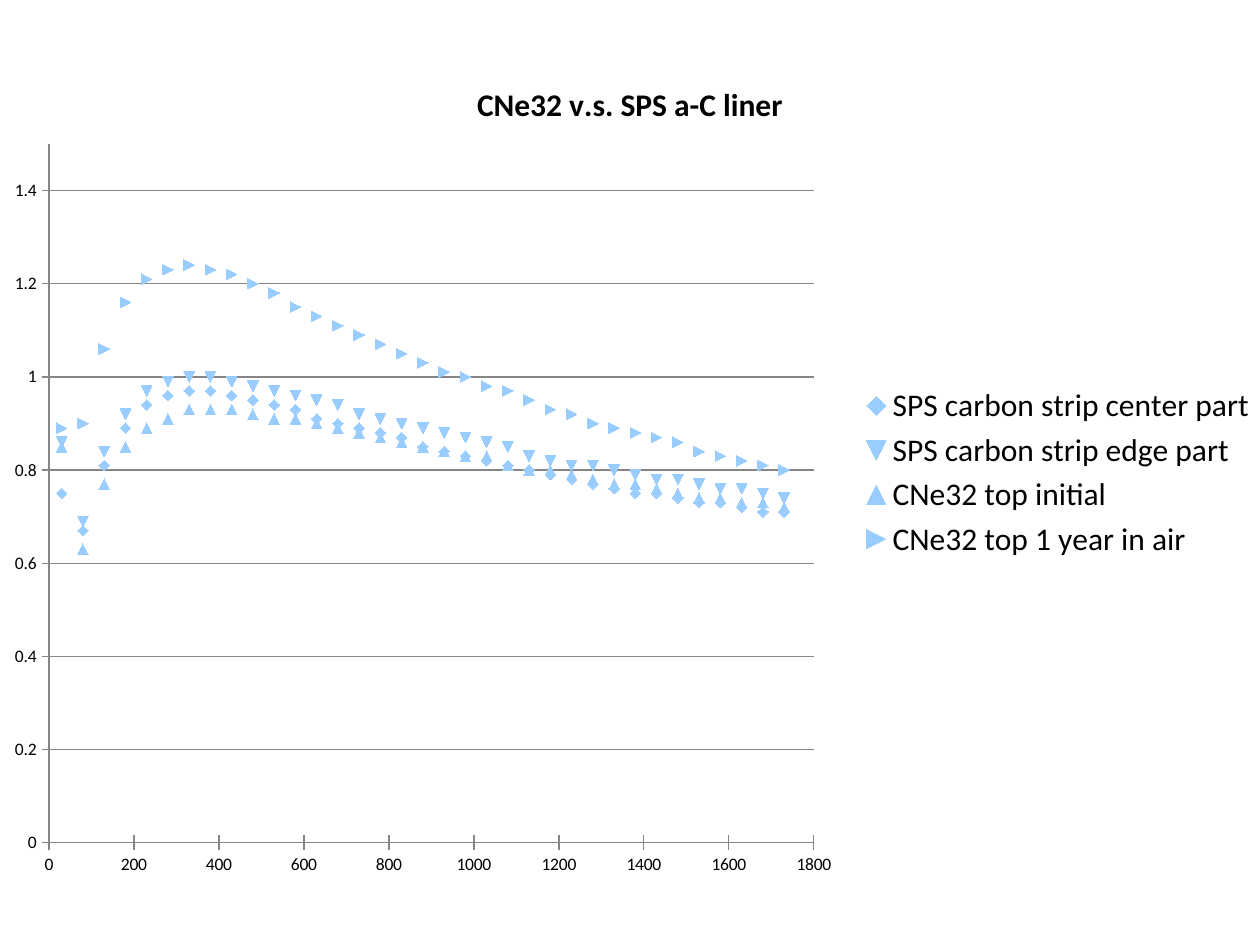
"""Build the CNe32 versus SPS a-C liner scatter slide."""
import dataclasses

import lxml.etree
import pptx
import pptx.chart.axis
import pptx.chart.chart
import pptx.chart.data
import pptx.dml.color
import pptx.enum.chart
import pptx.oxml.ns
import pptx.util

PX = 914400 / 126
BLACK = pptx.dml.color.RGBColor(0x00, 0x00, 0x00)
GRAY = pptx.dml.color.RGBColor(0x86, 0x86, 0x86)
SKY = pptx.dml.color.RGBColor(0x99, 0xCC, 0xFF)
MARKER = pptx.enum.chart.XL_MARKER_STYLE
TICK = pptx.enum.chart.XL_TICK_MARK
X_VALUES = range(30, 1731, 50)


@dataclasses.dataclass(frozen=True)
class Box:
    x: int
    y: int
    w: int
    h: int


@dataclasses.dataclass(frozen=True)
class Curve:
    name: str
    style: MARKER
    values: list[float]


CHART = Box(-10, 53, 1280, 839)
PLOT = Box(49, 144, 765, 699)
CURVES = [
    Curve("SPS carbon strip center part", MARKER.DIAMOND, [
        0.75, 0.67, 0.81, 0.89, 0.94, 0.96, 0.97, 0.97, 0.96, 0.95, 0.94, 0.93,
        0.91, 0.9, 0.89, 0.88, 0.87, 0.85, 0.84, 0.83, 0.82, 0.81, 0.8, 0.79,
        0.78, 0.77, 0.76, 0.75, 0.75, 0.74, 0.73, 0.73, 0.72, 0.71, 0.71]),
    Curve("SPS carbon strip edge part", MARKER.AUTOMATIC, [
        0.86, 0.69, 0.84, 0.92, 0.97, 0.99, 1, 1, 0.99, 0.98, 0.97, 0.96,
        0.95, 0.94, 0.92, 0.91, 0.9, 0.89, 0.88, 0.87, 0.86, 0.85, 0.83, 0.82,
        0.81, 0.81, 0.8, 0.79, 0.78, 0.78, 0.77, 0.76, 0.76, 0.75, 0.74]),
    Curve("CNe32 top initial", MARKER.TRIANGLE, [
        0.85, 0.63, 0.77, 0.85, 0.89, 0.91, 0.93, 0.93, 0.93, 0.92, 0.91, 0.91,
        0.9, 0.89, 0.88, 0.87, 0.86, 0.85, 0.84, 0.83, 0.83, 0.81, 0.8, 0.8,
        0.79, 0.78, 0.77, 0.77, 0.76, 0.75, 0.74, 0.74, 0.73, 0.73, 0.72]),
    Curve("CNe32 top 1 year in air", MARKER.DOT, [
        0.89, 0.9, 1.06, 1.16, 1.21, 1.23, 1.24, 1.23, 1.22, 1.2, 1.18, 1.15,
        1.13, 1.11, 1.09, 1.07, 1.05, 1.03, 1.01, 1, 0.98, 0.97, 0.95, 0.93,
        0.92, 0.9, 0.89, 0.88, 0.87, 0.86, 0.84, 0.83, 0.82, 0.81, 0.8]),
]


def px(n: int) -> pptx.util.Emu:
    return pptx.util.Emu(round(n * PX))


def set_attrs(target: object, values: dict[str, object]) -> None:
    for name, value in values.items():
        setattr(target, name, value)


def set_font(font: object, size: int, bold: bool = False) -> None:
    set_attrs(font, {"name": "Calibri", "size": pptx.util.Pt(size), "bold": bold})
    font.color.rgb = BLACK


def set_line(line: object) -> None:
    line.color.rgb = GRAY
    line.width = pptx.util.Pt(0.75)


def format_axis(axis: pptx.chart.axis.ValueAxis, top: float, step: float, grid: bool) -> None:
    set_attrs(axis, {
        "minimum_scale": 0, "maximum_scale": top, "major_unit": step,
        "has_major_gridlines": grid, "has_minor_gridlines": False,
        "major_tick_mark": TICK.CROSS, "minor_tick_mark": TICK.NONE,
    })
    set_attrs(axis.tick_labels, {"number_format": "General", "number_format_is_linked": False})
    set_font(axis.tick_labels.font, 10)
    set_line(axis.format.line)
    if grid:
        set_line(axis.major_gridlines.format.line)


def place_plot(chart: pptx.chart.chart.Chart, plot: Box, frame: Box) -> None:
    qn = pptx.oxml.ns.qn
    area = chart.element.find(".//" + qn("c:plotArea"))
    for old in area.findall(qn("c:layout")):
        area.remove(old)
    layout = lxml.etree.Element(qn("c:layout"))
    area.insert(0, layout)
    manual = lxml.etree.SubElement(layout, qn("c:manualLayout"))
    settings = {
        "layoutTarget": "inner", "xMode": "edge", "yMode": "edge",
        "x": (plot.x - frame.x) / frame.w, "y": (plot.y - frame.y) / frame.h,
        "w": plot.w / frame.w, "h": plot.h / frame.h,
    }
    for tag, value in settings.items():
        lxml.etree.SubElement(manual, qn(f"c:{tag}"), val=str(value))


def add_scatter(s: object, curves: list[Curve]) -> None:
    data = pptx.chart.data.XyChartData()
    for curve in curves:
        series = data.add_series(curve.name)
        for x, y in zip(X_VALUES, curve.values):
            series.add_data_point(x, y)
    chart = s.shapes.add_chart(
        pptx.enum.chart.XL_CHART_TYPE.XY_SCATTER,
        px(CHART.x), px(CHART.y), px(CHART.w), px(CHART.h), data).chart
    set_font(chart.font, 10)
    chart.has_title = True
    tf = chart.chart_title.text_frame
    tf.text = "CNe32 v.s. SPS a-C liner"
    set_font(tf.paragraphs[0].runs[0].font, 18, True)
    chart.has_legend = True
    set_attrs(chart.legend, {
        "position": pptx.enum.chart.XL_LEGEND_POSITION.RIGHT, "include_in_layout": False})
    set_font(chart.legend.font, 18)
    format_axis(chart.category_axis, 1800, 200, False)
    format_axis(chart.value_axis, 1.5, 0.2, True)
    chart.plots[0].vary_by_categories = False
    for series, curve in zip(chart.plots[0].series, curves):
        series.format.line.fill.background()
        set_attrs(series.marker, {"style": curve.style, "size": 6})
        for fill in (series.marker.format.fill, series.marker.format.line.fill):
            fill.solid()
            fill.fore_color.rgb = SKY
    place_plot(chart, PLOT, CHART)


def main() -> None:
    prs = pptx.Presentation()
    set_attrs(prs, {"slide_width": px(1260), "slide_height": px(945)})
    s = prs.slides.add_slide(prs.slide_layouts[6])
    add_scatter(s, CURVES)
    prs.save("out.pptx")


if __name__ == "__main__":
    main()
